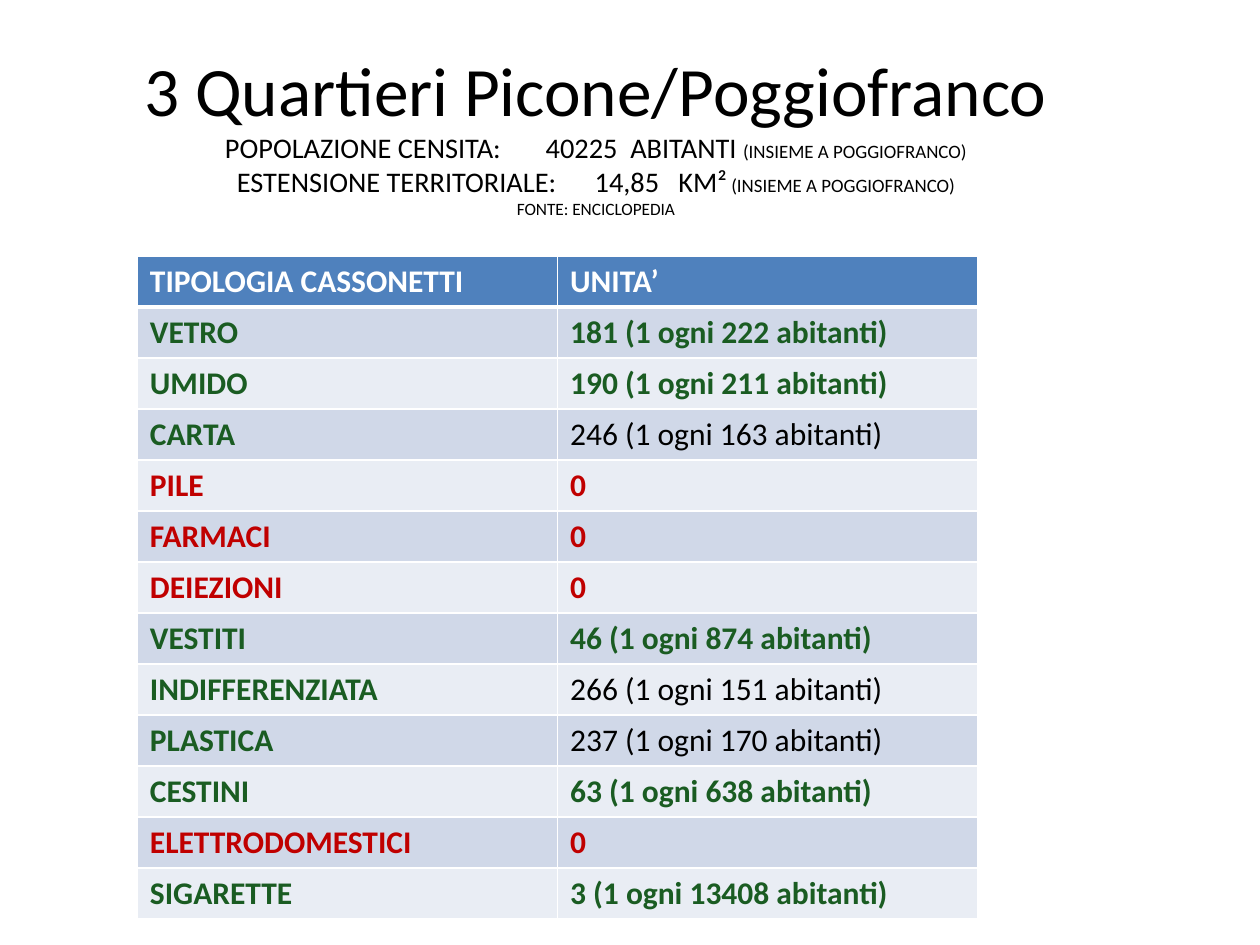
import pptx
import pptx.dml.color
import pptx.enum.text
import pptx.oxml
import pptx.oxml.ns
import pptx.util

WIDTH, HEIGHT = 10, 7.5
FONT = "Calibri"
BLACK, WHITE, GREEN, RED = "000000", "FFFFFF", "1A5C22", "C00000"
HEADER_FILL, BAND_FILLS = "4F81BD", ("D0D8E8", "E9EDF4")
SPACE_WIDTH = 0.226

TITLE_LINES = [
    [("3 Quartieri Picone/Poggiofranco", 39.6, 1)],
    [("POPOLAZIONE CENSITA:", 16.2, 1), (" ", 16.2, 7), ("40225", 16.2, 1),
     (" ", 16.2, 2), ("ABITANTI ", 16.2, 1), ("(INSIEME A POGGIOFRANCO)", 10.8, 1)],
    [("ESTENSIONE TERRITORIALE:", 16.2, 1), (" ", 16.2, 6), ("14,85", 16.2, 1),
     (" ", 16.2, 3), ("KM²", 16.2, 1), (" (INSIEME A POGGIOFRANCO)", 10.8, 1)],
    [("FONTE: ENCICLOPEDIA", 9.9, 1)],
]

HEADINGS = ("TIPOLOGIA CASSONETTI", "UNITA’")
BINS = [
    ("VETRO", "181 (1 ogni 222 abitanti)", GREEN),
    ("UMIDO", "190 (1 ogni 211 abitanti)", GREEN),
    ("CARTA", "246 (1 ogni 163 abitanti)", BLACK),
    ("PILE", "0", RED),
    ("FARMACI", "0", RED),
    ("DEIEZIONI", "0", RED),
    ("VESTITI", "46 (1 ogni 874 abitanti)", GREEN),
    ("INDIFFERENZIATA", "266 (1 ogni 151 abitanti)", BLACK),
    ("PLASTICA", "237 (1 ogni 170 abitanti)", BLACK),
    ("CESTINI", "63 (1 ogni 638 abitanti)", GREEN),
    ("ELETTRODOMESTICI", "0", RED),
    ("SIGARETTE", "3 (1 ogni 13408 abitanti)", GREEN),
]


def rgb(value):
    return pptx.dml.color.RGBColor.from_string(value)


def across(share):
    return pptx.util.Inches(WIDTH * share)


def down(share):
    return pptx.util.Inches(HEIGHT * share)


def format_run(run, size, color, bold=False):
    run.font.name = FONT
    run.font.size = pptx.util.Pt(size)
    run.font.bold = bold
    run.font.color.rgb = rgb(color)


def widen_space(run, size, spaces):
    extra = (spaces - 1) * size * SPACE_WIDTH
    run.font._element.set("spc", str(round(extra * 100)))


def add_title(slide):
    shape = slide.shapes.add_textbox(across(0.023), down(0.03), across(0.9), down(0.167))
    text_frame = shape.text_frame
    text_frame.word_wrap = True
    text_frame.margin_top = down(0.02)
    text_frame.vertical_anchor = pptx.enum.text.MSO_ANCHOR.TOP
    text_frame.text = "\n".join("" for line in TITLE_LINES)
    for paragraph, line in zip(text_frame.paragraphs, TITLE_LINES):
        paragraph.alignment = pptx.enum.text.PP_ALIGN.CENTER
        for text, size, spaces in line:
            run = paragraph.add_run()
            run.text = text
            format_run(run, size, BLACK)
            if spaces > 1:
                widen_space(run, size, spaces)


def add_borders(cell, top, bottom):
    properties = cell._tc.get_or_add_tcPr()
    for side, points in (("L", 1), ("R", 1), ("T", top), ("B", bottom)):
        properties.append(pptx.oxml.parse_xml(
            f'<a:ln{side} {pptx.oxml.ns.nsdecls("a")} w="{pptx.util.Pt(points)}">'
            f'<a:solidFill><a:srgbClr val="{WHITE}"/></a:solidFill></a:ln{side}>'
        ))


def fill_cell(cell, text, color, bold, fill):
    cell.text_frame.text = text
    format_run(cell.text_frame.paragraphs[0].runs[0], 18, color, bold)
    cell.fill.solid()
    cell.fill.fore_color.rgb = rgb(fill)


def add_bin_table(slide):
    row_count = len(BINS) + 1
    table = slide.shapes.add_table(
        row_count, len(HEADINGS), across(0.109), down(0.271), across(0.667), down(0.702)
    ).table
    for column, heading in enumerate(HEADINGS):
        cell = table.cell(0, column)
        add_borders(cell, 1, 3)
        fill_cell(cell, heading, WHITE, True, HEADER_FILL)
    for row, (name, units, color) in enumerate(BINS, start=1):
        name_color = GREEN if color == BLACK else color
        entries = ((name, name_color, True), (units, color, color != BLACK))
        for column, (text, text_color, bold) in enumerate(entries):
            cell = table.cell(row, column)
            add_borders(cell, 3 if row == 1 else 1, 1)
            fill_cell(cell, text, text_color, bold, BAND_FILLS[(row - 1) % 2])


def main():
    presentation = pptx.Presentation()
    presentation.slide_width = across(1)
    presentation.slide_height = down(1)
    slide = presentation.slides.add_slide(presentation.slide_layouts[6])
    add_title(slide)
    add_bin_table(slide)
    presentation.save("out.pptx")


if __name__ == "__main__":
    main()
